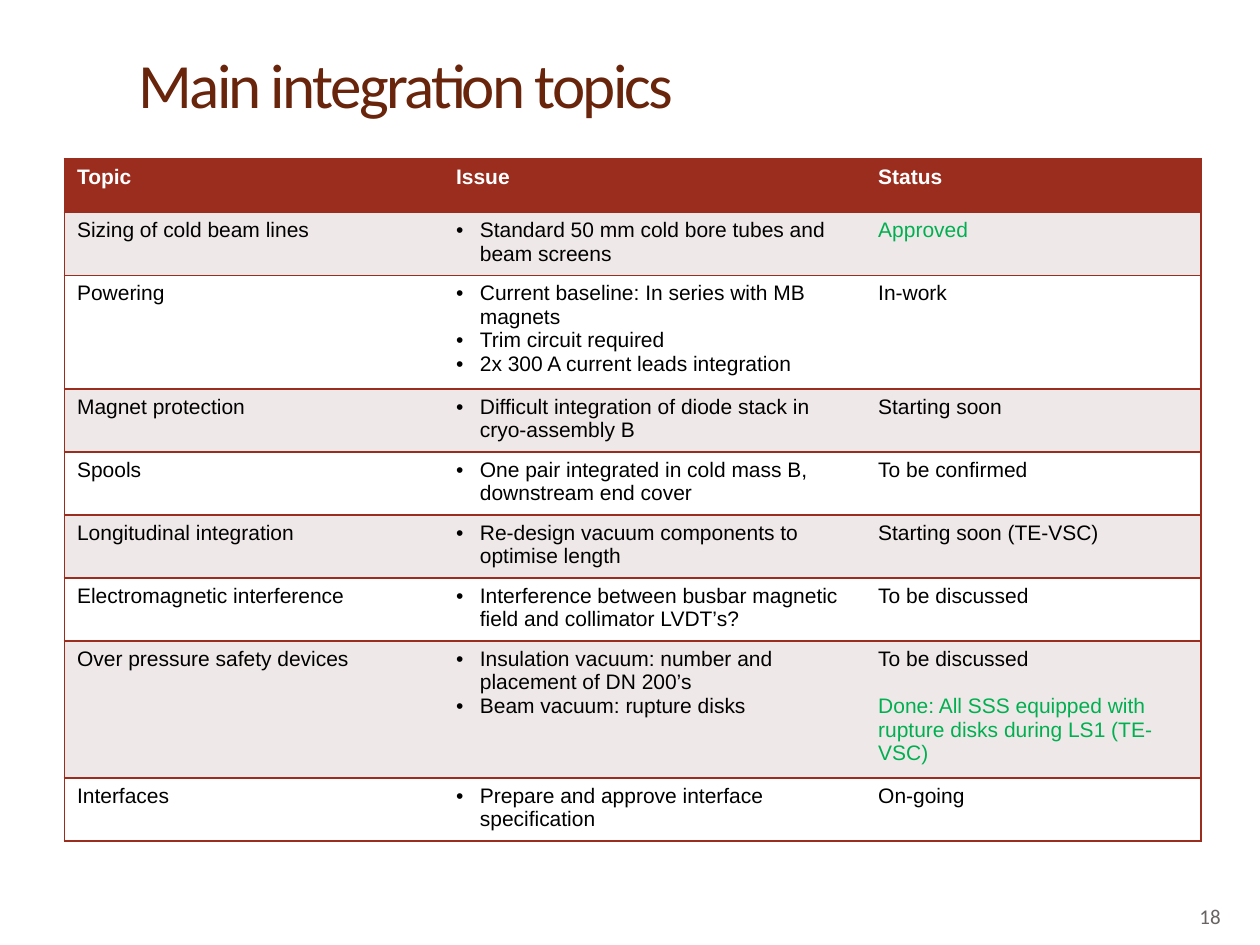
from lxml.etree import SubElement
from pptx import Presentation
from pptx.dml.color import RGBColor
from pptx.enum.text import MSO_ANCHOR
from pptx.oxml.ns import qn
from pptx.util import Cm, Pt

BROWN = RGBColor(0x69, 0x24, 0x0C)
RED = RGBColor(0x9B, 0x2D, 0x1F)
PINK = RGBColor(0xEF, 0xE8, 0xE8)
GREEN = RGBColor(0x00, 0xB0, 0x50)
GRAY = RGBColor(0x69, 0x64, 0x64)
BLACK = RGBColor(0, 0, 0)
WHITE = RGBColor(255, 255, 255)

HEAD = ("Topic", "Issue", "Status")
WIDTHS = (7.64, 8.51, 6.76)
ROWS = [
    (1.2, "Sizing of cold beam lines",
     ["Standard 50 mm cold bore tubes and beam screens"],
     [("Approved", GREEN)]),
    (2.24, "Powering",
     ["Current baseline: In series with MB magnets",
      "Trim circuit required",
      "2x 300 A current leads integration"],
     [("In-work", BLACK)]),
    (1.25, "Magnet protection",
     ["Difficult integration of diode stack in cryo-assembly B"],
     [("Starting soon", BLACK)]),
    (1.2, "Spools",
     ["One pair integrated in cold mass B, downstream end cover"],
     [("To be confirmed", BLACK)]),
    (1.2, "Longitudinal integration",
     ["Re-design vacuum components to optimise length"],
     [("Starting soon (TE-VSC)", BLACK)]),
    (1.2, "Electromagnetic interference",
     ["Interference between busbar magnetic field and collimator LVDT’s?"],
     [("To be discussed", BLACK)]),
    (2.62, "Over pressure safety devices",
     ["Insulation vacuum: number and placement of DN 200’s",
      "Beam vacuum: rupture disks"],
     [("To be discussed", BLACK),
      ("Done: All SSS equipped with rupture disks during LS1 (TE-VSC)", GREEN)]),
    (1.2, "Interfaces",
     ["Prepare and approve interface specification"],
     [("On-going", BLACK)]),
]


def write(frame, text, size=12, face="Arial", color=BLACK, bold=False,
          bullet=False, track=0, first=True, gap=0):
    para = frame.paragraphs[0] if first else frame.add_paragraph()
    if bullet:
        props = para._p.get_or_add_pPr()
        props.set("marL", str(Cm(0.48)))
        props.set("indent", str(-Cm(0.48)))
        SubElement(props, qn("a:buFont")).set("typeface", "Arial")
        SubElement(props, qn("a:buChar")).set("char", "•")
    if gap:
        para.space_before = Pt(gap)
    run = para.add_run()
    run.text = text
    font = run.font
    font.size, font.name, font.bold = Pt(size), face, bold
    font.color.rgb = color
    if track:
        run._r.get_or_add_rPr().set("spc", str(track))


class Deck:
    def __init__(self, wide, high):
        self.show = Presentation()
        self.show.slide_width, self.show.slide_height = Cm(wide), Cm(high)
        self.slide = self.show.slides.add_slide(self.show.slide_layouts[6])
        self.face, self.line = "Calibri", RED

    def label(self, text, left, top, wide, high, anchor=MSO_ANCHOR.TOP, **style):
        box = self.slide.shapes.add_textbox(Cm(left), Cm(top), Cm(wide), Cm(high))
        frame = box.text_frame
        frame.word_wrap = True
        frame.vertical_anchor = anchor
        write(frame, text, face=self.face, **style)

    def frame(self, cell, fill, sides):
        props = cell._tc.get_or_add_tcPr()
        for side in "LRTB":
            edge = SubElement(props, qn(f"a:ln{side}"), w=str(Pt(1)))
            if side in sides:
                paint = SubElement(edge, qn("a:solidFill"))
                SubElement(paint, qn("a:srgbClr"), val=str(self.line))
            else:
                SubElement(edge, qn("a:noFill"))
        cell.fill.solid()
        cell.fill.fore_color.rgb = fill

    def table(self, left, top, widths, head, rows):
        highs = [1.08] + [row[0] for row in rows]
        grid = self.slide.shapes.add_table(
            len(highs), len(widths), Cm(left), Cm(top),
            Cm(sum(widths)), Cm(sum(highs))).table
        for col, wide in zip(grid.columns, widths):
            col.width = Cm(wide)
        for num, high in enumerate(highs):
            grid.rows[num].height = Cm(high)
            fill = RED if num == 0 else PINK if num % 2 else WHITE
            for col, sides in enumerate(("LTB", "TB", "RTB")):
                self.frame(grid.cell(num, col), fill, sides)
        for col, text in enumerate(head):
            write(grid.cell(0, col).text_frame, text, color=WHITE, bold=True)
        for num, (_, topic, points, states) in enumerate(rows, 1):
            cells = [grid.cell(num, col).text_frame for col in range(3)]
            write(cells[0], topic)
            for pos, text in enumerate(points):
                write(cells[1], text, bullet=True, first=pos == 0)
            for pos, (text, color) in enumerate(states):
                write(cells[2], text, color=color, first=pos == 0,
                      gap=13.5 if pos else 0)

    def save(self):
        self.show.save("out.pptx")


def main():
    deck = Deck(25.4, 19.05)
    deck.label("Main integration topics", 2.54, 0.8, 21.59, 2.54,
               size=36, color=BROWN, track=-150)
    deck.table(1.3, 3.2, WIDTHS, HEAD, ROWS)
    deck.label("18", 23.93, 17.83, 1.27, 1.02, MSO_ANCHOR.BOTTOM, color=GRAY)
    deck.save()


if __name__ == "__main__":
    main()
